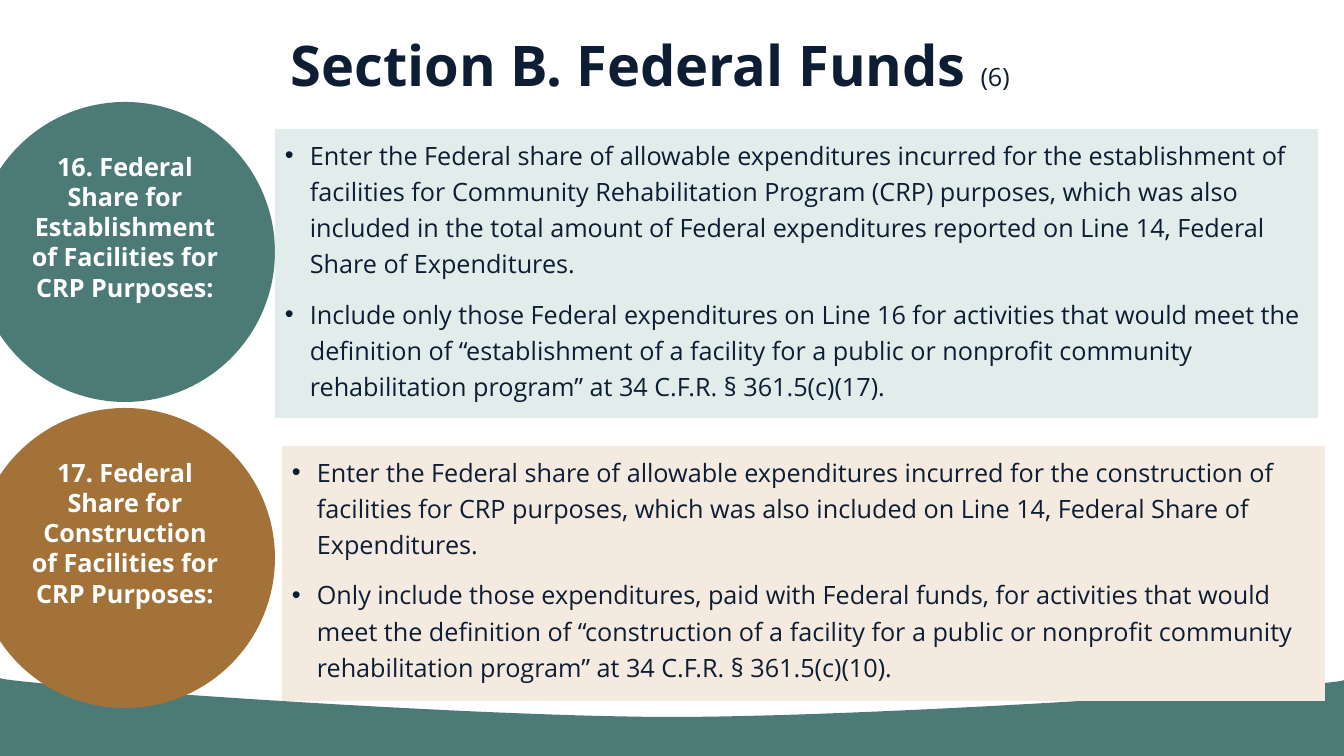
import lxml.etree
import pptx
import pptx.dml.color
import pptx.enum.shapes
import pptx.enum.text
import pptx.oxml.ns
import pptx.util

PX = 914400 / 100.8
SLIDE_W, SLIDE_H = 1344, 756
CURVE_STEPS = 40
COLORS = {
    "navy": "0D1D34",
    "white": "FFFFFF",
    "teal": "4C7A76",
    "mint": "E1ECEB",
    "bronze": "A37239",
    "cream": "F4EADF",
}
BASE_FONT = {"name": "Open Sans", "size": pptx.util.Pt(18), "bold": False}
BOLD_FONT = BASE_FONT | {"bold": True}
TITLE_FONT = BOLD_FONT | {"size": pptx.util.Pt(40)}
BULLET_PARAGRAPH = {
    "alignment": pptx.enum.text.PP_ALIGN.LEFT,
    "line_spacing": 1.2,
}
CIRCLE_PARAGRAPH = {"alignment": pptx.enum.text.PP_ALIGN.CENTER}
TITLE_PARAGRAPH = {"line_spacing": 1.02}

SECTIONS = [
    {
        "circle": (-25, 102, 300, 300),
        "panel": (275, 129, 1043, 289),
        "colors": ("teal", "mint"),
        "heading": "16. Federal Share for Establishment of Facilities for CRP Purposes:",
        "points": [
            "Enter the Federal share of allowable expenditures incurred for the "
            "establishment of facilities for Community Rehabilitation Program (CRP) "
            "purposes, which was also included in the total amount of Federal "
            "expenditures reported on Line 14, Federal Share of Expenditures.",
            "Include only those Federal expenditures on Line 16 for activities that "
            "would meet the definition of “establishment of a facility for a public or "
            "nonprofit community rehabilitation program” at 34 C.F.R. § 361.5(c)(17).",
        ],
    },
    {
        "circle": (-25, 408, 300, 300),
        "panel": (282, 446, 1043, 255),
        "colors": ("bronze", "cream"),
        "heading": "17. Federal Share for Construction of Facilities for CRP Purposes:",
        "points": [
            "Enter the Federal share of allowable expenditures incurred for the "
            "construction of facilities for CRP purposes, which was also included on "
            "Line 14, Federal Share of Expenditures.",
            "Only include those expenditures, paid with Federal funds, for activities "
            "that would meet the definition of “construction of a facility for a public "
            "or nonprofit community rehabilitation program” at 34 C.F.R. § 361.5(c)(10).",
        ],
    },
]


def emu(px):
    """Turn px into EMU."""
    return round(px * PX)


def apply_format(target, values):
    """Set each attribute of the target from a dict of values."""
    for name, value in values.items():
        setattr(target, name, value)


def paint(shape, color):
    """Give a shape a plain fill with no line or shadow."""
    shape.shadow.inherit = False
    shape.fill.solid()
    shape.fill.fore_color.rgb = pptx.dml.color.RGBColor.from_string(COLORS[color])
    shape.line.fill.background()


def add_run(paragraph, text, font_values, color):
    """Append a formatted run to a paragraph."""
    run = paragraph.add_run()
    run.text = text
    apply_format(run.font, font_values)
    run.font.color.rgb = pptx.dml.color.RGBColor.from_string(COLORS[color])


def add_bullet(paragraph):
    """Give a paragraph a round bullet with a hanging indent."""
    properties = paragraph._p.get_or_add_pPr()
    properties.set("marL", str(emu(25)))
    properties.set("indent", str(emu(-25)))
    bullet_font = lxml.etree.SubElement(properties, pptx.oxml.ns.qn("a:buFont"))
    bullet_font.set("typeface", "Arial")
    bullet = lxml.etree.SubElement(properties, pptx.oxml.ns.qn("a:buChar"))
    bullet.set("char", "•")


def add_block(slide, kind, box, color):
    """Add a filled shape whose text starts at the top."""
    block = slide.shapes.add_shape(kind, *map(emu, box))
    paint(block, color)
    block.text_frame.word_wrap = True
    block.text_frame.vertical_anchor = pptx.enum.text.MSO_ANCHOR.TOP
    return block.text_frame


def curve_points(start, control_1, control_2, end):
    """Sample a cubic curve, leaving out its start."""
    points = []
    for step in range(1, CURVE_STEPS + 1):
        t = step / CURVE_STEPS
        weights = ((1 - t) ** 3, 3 * t * (1 - t) ** 2, 3 * t * t * (1 - t), t ** 3)
        corners = (start, control_1, control_2, end)
        points.append(tuple(
            emu(sum(w * corner[axis] for w, corner in zip(weights, corners)))
            for axis in (0, 1)
        ))
    return points


def add_wave(slide, box):
    """Draw the footer wave within its box."""
    left, top, width, height = box
    right, bottom, middle = left + width, top + height, left + width // 2 - 5
    start, trough, end = (left, top), (middle, top + 39), (right, top + 2)
    points = curve_points(start, (left, top + 5), (left + 444, top + 38), trough)
    points += curve_points(trough, (left + 892, top + 39), (right, top + 7), end)
    points += [(emu(right), emu(bottom)), (emu(left), emu(bottom))]
    builder = slide.shapes.build_freeform(emu(left), emu(top))
    builder.add_line_segments(points, close=True)
    paint(builder.convert_to_shape(), "teal")


def add_title(slide, box):
    """Write the slide title and its page count at the foot of the box."""
    frame = slide.shapes.add_textbox(*map(emu, box)).text_frame
    frame.word_wrap = True
    frame.vertical_anchor = pptx.enum.text.MSO_ANCHOR.BOTTOM
    title = frame.paragraphs[0]
    apply_format(title, TITLE_PARAGRAPH)
    add_run(title, "Section B. Federal Funds ", TITLE_FONT, "navy")
    add_run(title, "(6)", BASE_FONT, "navy")


def add_circle(slide, box, heading, color):
    """Write the section heading in a circle."""
    frame = add_block(slide, pptx.enum.shapes.MSO_SHAPE.OVAL, box, color)
    apply_format(frame.paragraphs[0], CIRCLE_PARAGRAPH)
    add_run(frame.paragraphs[0], heading, BOLD_FONT, "white")


def add_panel(slide, box, points, color):
    """List the section's points in a tinted panel."""
    frame = add_block(slide, pptx.enum.shapes.MSO_SHAPE.RECTANGLE, box, color)
    for index, point in enumerate(points):
        paragraph = frame.add_paragraph() if index else frame.paragraphs[0]
        add_bullet(paragraph)
        apply_format(paragraph, BULLET_PARAGRAPH)
        if index:
            paragraph.space_before = pptx.util.Pt(10)
        add_run(paragraph, point, BASE_FONT, "navy")


def main():
    """Build and save the slide."""
    deck = pptx.Presentation()
    deck.slide_width, deck.slide_height = emu(SLIDE_W), emu(SLIDE_H)
    slide = deck.slides.add_slide(deck.slide_layouts[6])
    add_wave(slide, (0, 678, SLIDE_W, SLIDE_H - 678))
    add_title(slide, (281, 17, 1063, 86))
    for section in SECTIONS:
        circle_color, panel_color = section["colors"]
        add_circle(slide, section["circle"], section["heading"], circle_color)
        add_panel(slide, section["panel"], section["points"], panel_color)
    deck.save("out.pptx")


if __name__ == "__main__":
    main()
